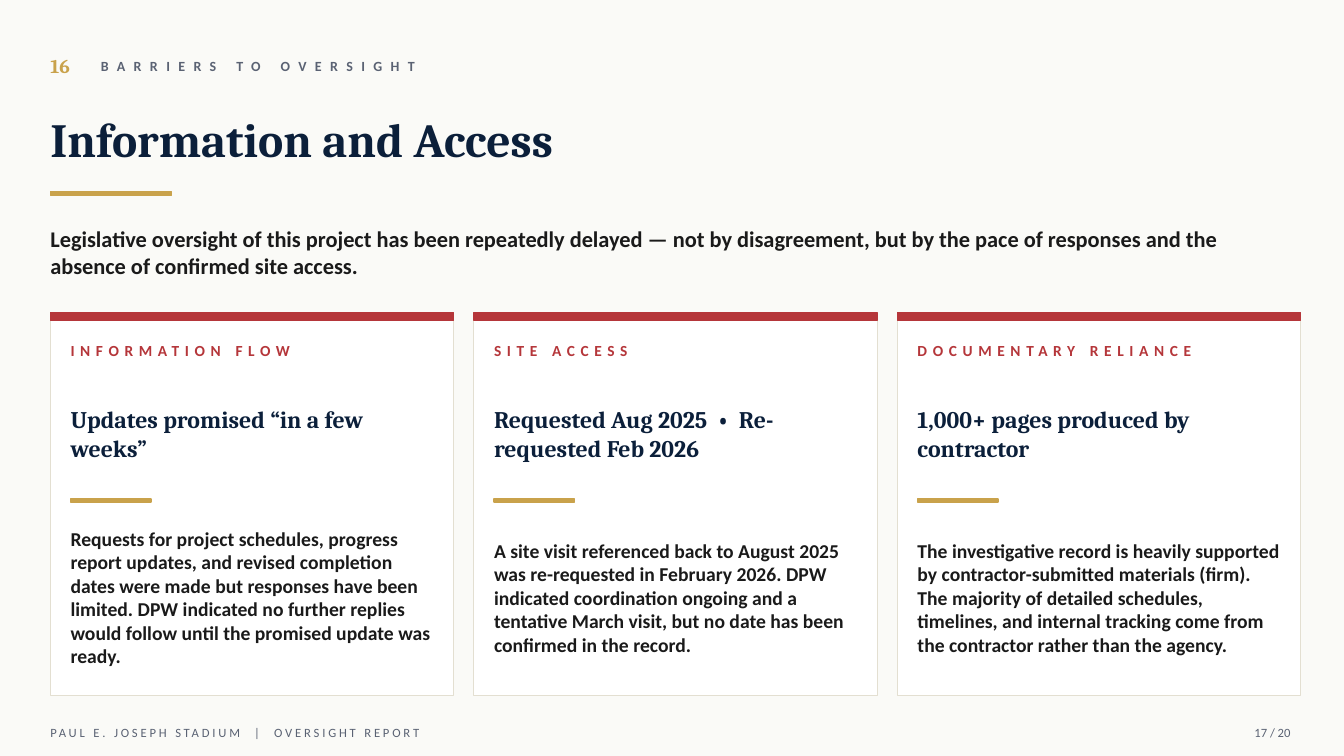
from pptx import Presentation
from pptx.dml.color import RGBColor
from pptx.enum import shapes, text
from pptx.util import Inches, Pt

PAPER = RGBColor(0xFA, 0xFA, 0xF7)
WHITE = RGBColor(0xFF, 0xFF, 0xFF)
NAVY = RGBColor(0x0B, 0x1F, 0x3A)
GOLD = RGBColor(0xC9, 0xA2, 0x4B)
RED = RGBColor(0xB5, 0x36, 0x3A)
SLATE = RGBColor(0x5A, 0x62, 0x73)
INK = RGBColor(0x1A, 0x1A, 0x1A)
BORDER = RGBColor(0xE3, 0xDF, 0xD1)
HEAD_FONT, BODY_FONT = "Cambria", "Calibri"

MARGIN = 0.5
CARD_TOP, CARD_W, CARD_H, CARD_GAP = 3.1, 4, 3.8, 0.2
CARD_PAD = 0.2

CARDS = [
    ("INFORMATION FLOW", "Updates promised “in a few weeks”",
     "Requests for project schedules, progress report updates, and revised "
     "completion dates were made but responses have been limited. DPW indicated "
     "no further replies would follow until the promised update was ready."),
    ("SITE ACCESS", "Requested Aug 2025  •  Re-requested Feb 2026",
     "A site visit referenced back to August 2025 was re-requested in February "
     "2026. DPW indicated coordination ongoing and a tentative March visit, but "
     "no date has been confirmed in the record."),
    ("DOCUMENTARY RELIANCE", "1,000+ pages produced by contractor",
     "The investigative record is heavily supported by contractor-submitted "
     "materials (firm). The majority of detailed schedules, timelines, and "
     "internal tracking come from the contractor rather than the agency."),
]


def write(sp, content, size, color, font=BODY_FONT, bold=True, spacing=0,
          align=text.PP_ALIGN.LEFT):
    """Fill a text shape with one formatted run; spacing is in points."""
    tf = sp.text_frame
    tf.word_wrap = True
    tf.auto_size = text.MSO_AUTO_SIZE.NONE
    tf.vertical_anchor = text.MSO_ANCHOR.MIDDLE
    tf.margin_left = tf.margin_top = tf.margin_right = tf.margin_bottom = 0
    p = tf.paragraphs[0]
    p.alignment = align
    p.line_spacing = 1.0
    p.space_before = Pt(0)
    r = p.add_run()
    r.text = content
    r.font.name, r.font.size, r.font.bold = font, Pt(size), bold
    r.font.color.rgb = color
    if spacing:
        r.font._element.set("spc", str(spacing * 100))


def add_text(s, x, y, w, h, content, size, color, **style):
    sp = s.shapes.add_textbox(Inches(x), Inches(y), Inches(w), Inches(h))
    write(sp, content, size, color, **style)


def add_title(s, x, y, w, h, content):
    sp = s.shapes.title
    sp.left, sp.top, sp.width, sp.height = map(Inches, (x, y, w, h))
    write(sp, content, 34, NAVY, font=HEAD_FONT)


def add_rect(s, x, y, w, h, fill, line=None, line_width=1):
    sp = s.shapes.add_shape(shapes.MSO_SHAPE.RECTANGLE,
                            Inches(x), Inches(y), Inches(w), Inches(h))
    sp.shadow.inherit = False
    sp.fill.solid()
    sp.fill.fore_color.rgb = fill
    sp.line.color.rgb = line or fill
    sp.line.width = Pt(line_width)


def add_card(s, x, label, headline, body):
    add_rect(s, x, CARD_TOP, CARD_W, CARD_H, WHITE, BORDER, 0.75)
    add_rect(s, x, CARD_TOP, CARD_W, 0.08, RED)
    left, width = x + CARD_PAD, CARD_W - 2 * CARD_PAD
    add_text(s, left, 3.3, width, 0.35, label, 11, RED, spacing=4)
    add_text(s, left, 3.7, width, 1.2, headline, 17, NAVY, font=HEAD_FONT)
    add_rect(s, left, 4.95, 0.8, 0.03, GOLD)
    add_text(s, left, 5.05, width, 1.75, body, 14, INK)


def main():
    prs = Presentation()
    prs.slide_width, prs.slide_height = Inches(13.33), Inches(7.5)
    s = prs.slides.add_slide(prs.slide_layouts[5])
    s.background.fill.solid()
    s.background.fill.fore_color.rgb = PAPER

    add_text(s, MARGIN, 0.45, 0.6, 0.4, "16", 14, GOLD, font=HEAD_FONT)
    add_text(s, 1, 0.5, 6, 0.3, "BARRIERS TO OVERSIGHT", 10, SLATE, spacing=6)
    add_title(s, MARGIN, 0.95, 12, 0.85, "Information and Access")
    add_rect(s, MARGIN, 1.9, 1.2, 0.04, GOLD)
    add_text(s, MARGIN, 2.1, 12.3, 0.8,
             "Legislative oversight of this project has been repeatedly delayed — "
             "not by disagreement, but by the pace of responses and the absence "
             "of confirmed site access.", 16, INK)

    for i, card in enumerate(CARDS):
        add_card(s, MARGIN + i * (CARD_W + CARD_GAP), *card)

    add_text(s, MARGIN, 7.12, 8, 0.3, "PAUL E. JOSEPH STADIUM  |  OVERSIGHT REPORT",
             9, SLATE, bold=False, spacing=2)
    add_text(s, 11.8, 7.12, 1, 0.3, "17 / 20", 9, SLATE, bold=False,
             align=text.PP_ALIGN.RIGHT)
    prs.save("out.pptx")


if __name__ == "__main__":
    main()
